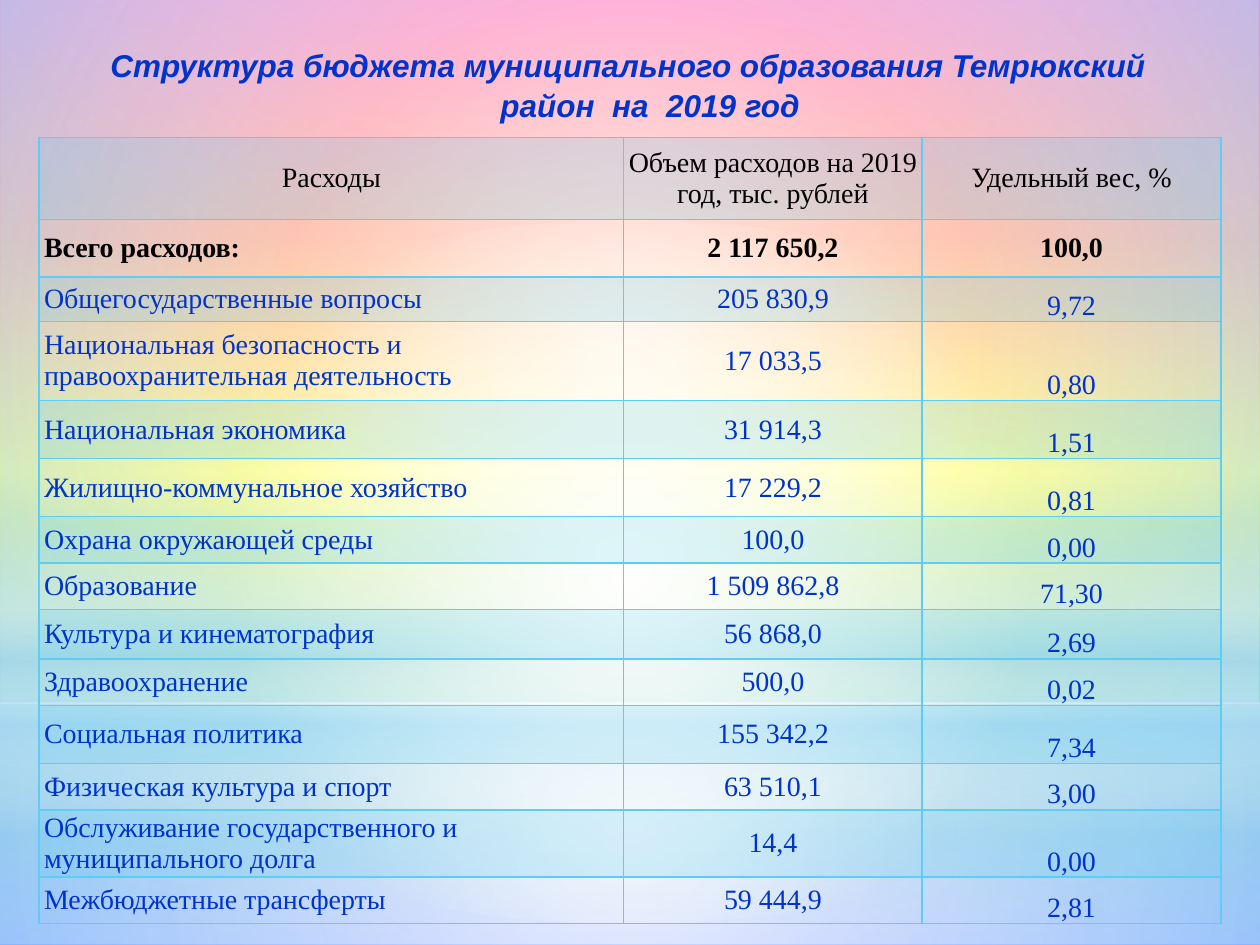
"""Build the slide with the expenditure structure of the 2019 district budget."""
from dataclasses import dataclass
from typing import NamedTuple

from lxml import etree
from pptx import Presentation
from pptx.dml.color import RGBColor
from pptx.enum.shapes import MSO_SHAPE
from pptx.enum.text import MSO_ANCHOR, PP_ALIGN
from pptx.oxml import parse_xml
from pptx.oxml.ns import nsdecls, qn
from pptx.util import Inches, Pt

RECTANGLE, ELLIPSE = MSO_SHAPE.RECTANGLE, MSO_SHAPE.OVAL
LEFT, CENTER = PP_ALIGN.LEFT, PP_ALIGN.CENTER
TOP, MIDDLE, BOTTOM = MSO_ANCHOR.TOP, MSO_ANCHOR.MIDDLE, MSO_ANCHOR.BOTTOM


@dataclass(frozen=True)
class Theme:
    title_font: str = "Arial"
    table_font: str = "Times New Roman"
    title_size: int = 18
    table_size: int = 16
    accent: str = "0033CC"
    dark: str = "000000"
    grid: str = "5ECCF3"
    white: str = "FFFFFF"
    haze: str = "B4DCFA"
    rainbow: tuple[str, ...] = ("FF3399", "FF6633", "FFFF00", "01A78F", "3366FF")
    grid_width: int = 1
    band_opacity: int = 20


THEME = Theme()


class Stop(NamedTuple):
    position: int
    color: str
    opacity: int = 100


class Glow(NamedTuple):
    preset: MSO_SHAPE
    left: float
    top: float
    width: float
    height: float
    stops: list[Stop]
    radial: bool = True


class Expense(NamedTuple):
    name: str
    amount: str
    share: str
    height: float


SKY = [Stop(25 * step, color) for step, color in enumerate(THEME.rainbow)]
WHITE, HAZE = THEME.white, THEME.haze
GLOWS = [
    Glow(RECTANGLE, 0, 5.58, 10, 1.92,
         [Stop(0, WHITE, 91), Stop(37, WHITE, 76), Stop(100, HAZE, 79)]),
    Glow(RECTANGLE, 0, 0, 10, 5.58,
         [Stop(0, WHITE, 89), Stop(48, WHITE, 62), Stop(100, HAZE, 79)]),
    Glow(RECTANGLE, 0, 4.12, 10, 2.5,
         [Stop(0, WHITE, 0), Stop(29, WHITE, 30), Stop(45, HAZE, 40),
          Stop(55, WHITE, 26), Stop(65, HAZE, 60), Stop(100, WHITE, 0)], False),
    Glow(ELLIPSE, 0, 1.75, 10, 5.58, [Stop(0, WHITE), Stop(56, WHITE, 0)]),
]
TITLE = "Структура бюджета муниципального образования Темрюкский район  на  2019 год"
COLUMN_WIDTHS = (4.64, 2.37, 2.37)
EXPENSES = [
    Expense("Расходы", "Объем расходов на 2019 год, тыс. рублей", "Удельный вес, %", 0.65),
    Expense("Всего расходов:", "2 117 650,2", "100,0", 0.46),
    Expense("Общегосударственные вопросы", "205 830,9", "9,72", 0.35),
    Expense("Национальная безопасность и правоохранительная деятельность",
            "17 033,5", "0,80", 0.63),
    Expense("Национальная экономика", "31 914,3", "1,51", 0.46),
    Expense("Жилищно-коммунальное хозяйство", "17 229,2", "0,81", 0.46),
    Expense("Охрана окружающей среды", "100,0", "0,00", 0.37),
    Expense("Образование", "1 509 862,8", "71,30", 0.37),
    Expense("Культура и кинематография", "56 868,0", "2,69", 0.39),
    Expense("Здравоохранение", "500,0", "0,02", 0.37),
    Expense("Социальная политика", "155 342,2", "7,34", 0.46),
    Expense("Физическая культура и спорт", "63 510,1", "3,00", 0.37),
    Expense("Обслуживание государственного и муниципального долга", "14,4", "0,00", 0.37),
    Expense("Межбюджетные трансферты", "59 444,9", "2,81", 0.37),
]
HEADER_ROW, TOTAL_ROW = 0, 1
NAME_COLUMN, SHARE_COLUMN = 0, 2


def apply_gradient(element, stops: list[Stop], radial: bool = False) -> None:
    """Replace the first solid fill inside an element with a gradient."""
    stop_xml = "".join(
        f'<a:gs pos="{stop.position * 1000}"><a:srgbClr val="{stop.color}">'
        f'<a:alpha val="{stop.opacity * 1000}"/></a:srgbClr></a:gs>' for stop in stops)
    direction = ('<a:path path="circle"><a:fillToRect l="50000" t="50000" r="50000" b="50000"/>'
                 '</a:path>' if radial else '<a:lin ang="5400000" scaled="0"/>')
    gradient = parse_xml(f'<a:gradFill {nsdecls("a")} rotWithShape="1">'
                         f'<a:gsLst>{stop_xml}</a:gsLst>{direction}</a:gradFill>')
    solid = element.find(".//" + qn("a:solidFill"))
    solid.getparent().replace(solid, gradient)


def add_glow(slide, glow: Glow) -> None:
    """Draw one translucent layer of the backdrop."""
    layer = slide.shapes.add_shape(glow.preset, Inches(glow.left), Inches(glow.top),
                                   Inches(glow.width), Inches(glow.height))
    layer.shadow.inherit = False
    layer.line.fill.background()
    layer.fill.solid()
    apply_gradient(layer.element, glow.stops, glow.radial)


def style_runs(paragraph, font: str, size: int, color: str,
               bold: bool = False, italic: bool = False) -> None:
    """Format every run of a paragraph."""
    for run in paragraph.runs:
        run.font.name, run.font.size = font, Pt(size)
        run.font.bold, run.font.italic = bold, italic
        run.font.color.rgb = RGBColor.from_string(color)


def add_title(slide) -> None:
    """Write the centred title with its hanging indent."""
    frame = slide.shapes.add_textbox(Inches(0.47), Inches(0.3),
                                     Inches(9.03), Inches(0.64)).text_frame
    frame.word_wrap, frame.vertical_anchor = True, TOP
    frame.text = TITLE
    paragraph = frame.paragraphs[0]
    paragraph.alignment, paragraph.line_spacing = CENTER, 1.05
    indent = Inches(0.35)
    properties = paragraph._p.get_or_add_pPr()
    properties.set("marL", str(indent))
    properties.set("indent", str(-indent))
    style_runs(paragraph, THEME.title_font, THEME.title_size, THEME.accent, True, True)


def style_cell(cell, banded: bool) -> None:
    """Give a cell its grid lines and its band fill."""
    properties = cell._tc.get_or_add_tcPr()
    for side in ("lnL", "lnR", "lnT", "lnB"):
        properties.append(parse_xml(
            f'<a:{side} {nsdecls("a")} w="{Pt(THEME.grid_width)}"><a:solidFill>'
            f'<a:srgbClr val="{THEME.grid}"/></a:solidFill></a:{side}>'))
    if not banded:
        cell.fill.background()
        return
    cell.fill.solid()
    cell.fill.fore_color.rgb = RGBColor.from_string(THEME.grid)
    color = properties.find(qn("a:solidFill")).find(qn("a:srgbClr"))
    etree.SubElement(color, qn("a:alpha")).set("val", str(THEME.band_opacity * 1000))


def fill_cell(cell, text: str, row: int, column: int) -> None:
    """Write and format one table cell."""
    summary = row <= TOTAL_ROW
    low_share = column == SHARE_COLUMN and not summary
    side_margin = Inches(0.01 if low_share else 0.04)
    cell.margin_left = cell.margin_right = side_margin
    cell.margin_top, cell.margin_bottom = Inches(0.01 if low_share else 0), 0
    cell.vertical_anchor = BOTTOM if low_share else MIDDLE
    cell.text_frame.text = text
    paragraph = cell.text_frame.paragraphs[0]
    paragraph.alignment = LEFT if column == NAME_COLUMN and row != HEADER_ROW else CENTER
    style_runs(paragraph, THEME.table_font, THEME.table_size,
               THEME.dark if summary else THEME.accent, bold=row == TOTAL_ROW)
    style_cell(cell, banded=row % 2 == 0)


def add_expense_table(slide) -> None:
    """Draw the table of expenses."""
    table = slide.shapes.add_table(
        len(EXPENSES), len(COLUMN_WIDTHS), Inches(0.31), Inches(1.09),
        Inches(sum(COLUMN_WIDTHS)), Inches(sum(item.height for item in EXPENSES))).table
    table.first_row = table.horz_banding = False
    for column, width in zip(table.columns, COLUMN_WIDTHS):
        column.width = Inches(width)
    for row, expense in enumerate(EXPENSES):
        table.rows[row].height = Inches(expense.height)
        for column, text in enumerate((expense.name, expense.amount, expense.share)):
            fill_cell(table.cell(row, column), text, row, column)


def main() -> None:
    """Build and save the presentation."""
    deck = Presentation()
    deck.slide_width, deck.slide_height = Inches(10), Inches(7.5)
    slide = deck.slides.add_slide(deck.slide_layouts[6])
    slide.background.fill.solid()
    apply_gradient(slide.element, SKY)
    for glow in GLOWS:
        add_glow(slide, glow)
    add_title(slide)
    add_expense_table(slide)
    deck.save("out.pptx")


if __name__ == "__main__":
    main()
